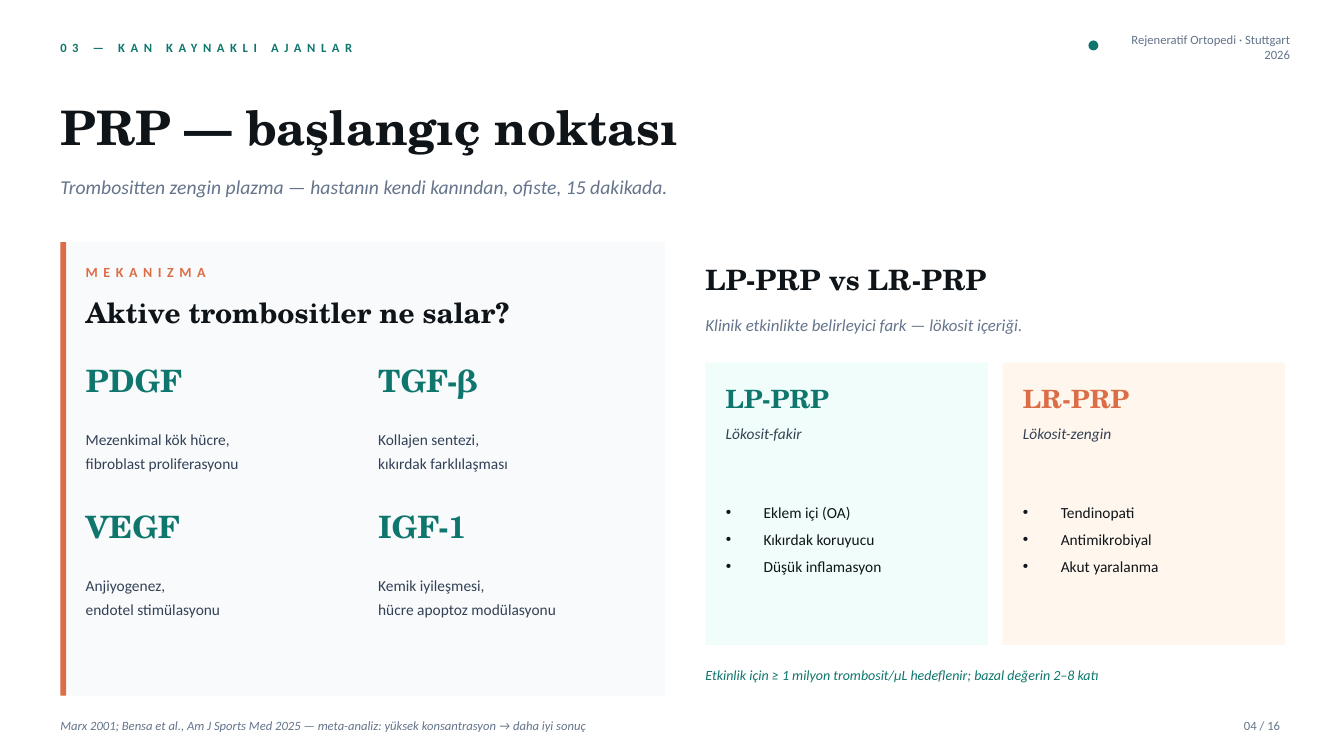
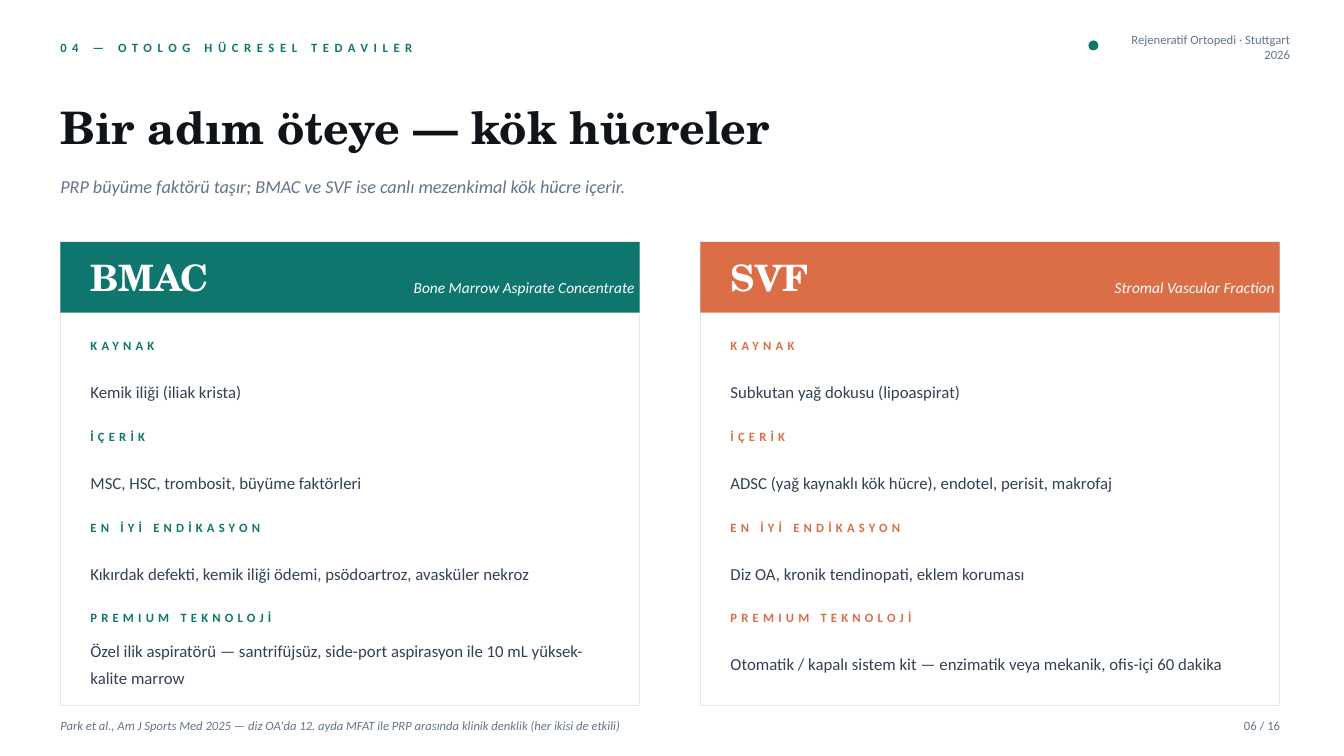
from dataclasses import dataclass

from pptx import Presentation
from pptx.dml.color import RGBColor
from pptx.enum.shapes import MSO_SHAPE
from pptx.enum.text import MSO_ANCHOR, MSO_AUTO_SIZE, PP_ALIGN
from pptx.util import Cm, Pt

RECT, OVAL = MSO_SHAPE.RECTANGLE, MSO_SHAPE.OVAL
MIDDLE, NO_FIT = MSO_ANCHOR.MIDDLE, MSO_AUTO_SIZE.NONE
LEFT, RIGHT = PP_ALIGN.LEFT, PP_ALIGN.RIGHT
TWO_CONTENT, TITLE_ONLY = 3, 5


@dataclass(frozen=True)
class Theme:
    # Fonts
    serif: str = "TeX Gyre Schola"
    sans: str = "Calibri"
    # Colours
    ink: str = "0F1419"
    text: str = "334155"
    muted: str = "64748B"
    teal: str = "0F766E"
    coral: str = "DC6E47"
    white: str = "FFFFFF"
    panel: str = "F8FAFC"
    mint: str = "F0FDFA"
    cream: str = "FFF7ED"
    border: str = "E2E8F0"
    # Type sizes
    title: int = 34
    title_small: int = 32
    band: int = 26
    factor: int = 22
    heading: int = 20
    card: int = 18
    lead: int = 14
    lead_small: int = 13
    body: int = 12
    detail: int = 11
    note: int = 10
    small: int = 9


T = Theme()
MARGIN = 1.52
CONTENT_TOP = 6.1
FOOTER_TOP = 17.91


# --- Element helpers ---

def write(sp, box, text, size=T.body, color=T.text, font=T.sans, bold=False,
          italic=False, tracking=0, align=LEFT, line=None, after=0):
    """Place a text shape at box (cm) and fill it, one paragraph per line."""
    sp.left, sp.top, sp.width, sp.height = map(Cm, box)
    tf = sp.text_frame
    tf.word_wrap = True
    tf.auto_size = NO_FIT
    tf.vertical_anchor = MIDDLE
    tf.margin_left = tf.margin_top = tf.margin_right = tf.margin_bottom = 0
    for i, content in enumerate(text.split("\n")):
        p = tf.add_paragraph() if i else tf.paragraphs[0]
        p.alignment = align
        p.space_before, p.space_after = Pt(0), Pt(after)
        if line:
            p.line_spacing = line
        r = p.add_run()
        r.text = content
        r.font.name, r.font.size = font, Pt(size)
        r.font.bold, r.font.italic = bold, italic
        r.font.color.rgb = RGBColor.from_string(color)
        if tracking:
            r.font._element.set("spc", str(tracking * 100))


def add_text(s, box, text, **fmt):
    write(s.shapes.add_textbox(*map(Cm, box)), box, text, **fmt)


def add_heading(s, box, text, size, color=T.ink):
    add_text(s, box, text, size=size, color=color, font=T.serif, bold=True)


def add_label(s, box, text, color, size=T.small, tracking=4):
    add_text(s, box, text, size=size, color=color, bold=True, tracking=tracking)


def add_block(s, box, fill, line=None, kind=RECT):
    sp = s.shapes.add_shape(kind, *map(Cm, box))
    sp.shadow.inherit = False
    sp.fill.solid()
    sp.fill.fore_color.rgb = RGBColor.from_string(fill)
    if line:
        sp.line.color.rgb = RGBColor.from_string(line)
        sp.line.width = Pt(1)
    else:
        sp.line.fill.background()


def add_list(s, sp, box, items):
    """Fill a body placeholder and bring it above the card behind it."""
    write(sp, box, "\n".join(items), size=T.detail, color=T.ink, after=6)
    s.shapes.element.append(sp.element)


# --- Shared slide frame ---

def add_frame(prs, layout, section, title, lead, source, page,
              title_size=T.title, lead_size=T.lead):
    s = prs.slides.add_slide(prs.slide_layouts[layout])
    write(s.shapes.title, (MARGIN, 2.29, 30, 1.78), title, size=title_size,
          color=T.ink, font=T.serif, bold=True)
    add_label(s, (MARGIN, 0.81, 20.32, 0.76), section, T.teal)
    add_block(s, (27.43, 1.02, 0.25, 0.25), T.teal, kind=OVAL)
    add_text(s, (27.81, 0.81, 4.7, 0.76), "Rejeneratif Ortopedi · Stuttgart 2026",
             size=T.small, color=T.muted, align=RIGHT)
    add_text(s, (MARGIN, 4.19, 30, 1.02), lead, size=lead_size,
             color=T.muted, italic=True)
    add_text(s, (MARGIN, FOOTER_TOP, 28, 0.76), source, size=T.small,
             color=T.muted, italic=True)
    add_text(s, (29.97, FOOTER_TOP, 2.29, 0.76), page, size=T.small,
             color=T.muted, align=RIGHT)
    return s


# --- PRP slide ---

def add_mechanism(s, factors):
    left = 2.16
    add_block(s, (MARGIN, CONTENT_TOP, 15.24, 11.43), T.panel)
    add_block(s, (MARGIN, CONTENT_TOP, 0.15, 11.43), T.coral)
    add_label(s, (left, 6.48, 14, 0.76), "MEKANIZMA", T.coral, size=T.note)
    add_heading(s, (left, 7.24, 14, 1.27), "Aktive trombositler ne salar?", T.heading)
    for i, (name, effect) in enumerate(factors):
        row, col = divmod(i, 2)
        x, y = left + col * 7.37, 9.02 + row * 3.68
        add_heading(s, (x, y, 6.86, 1.14), name, T.factor, T.teal)
        add_text(s, (x, y + 1.27, 6.86, 2.03), effect, size=T.detail, line=1.3)


def add_type_card(s, body, x, name, kind, items, fill, accent):
    y, inner, width = 9.14, x + 0.51, 6.1
    add_block(s, (x, y, 7.11, 7.11), fill)
    add_heading(s, (inner, y + 0.38, width, 1.02), name, T.card, accent)
    add_text(s, (inner, y + 1.4, width, 0.76), kind, size=T.detail, italic=True)
    add_list(s, body, (inner, y + 2.29, width, 4.32), items)


def build_prp(prs):
    s = add_frame(
        prs, TWO_CONTENT, "03 — KAN KAYNAKLI AJANLAR", "PRP — başlangıç noktası",
        "Trombositten zengin plazma — hastanın kendi kanından, ofiste, 15 dakikada.",
        "Marx 2001; Bensa et al., Am J Sports Med 2025 — meta-analiz: "
        "yüksek konsantrasyon → daha iyi sonuç", "04 / 16")
    add_mechanism(s, [
        ("PDGF", "Mezenkimal kök hücre,\nfibroblast proliferasyonu"),
        ("TGF-β", "Kollajen sentezi,\nkıkırdak farklılaşması"),
        ("VEGF", "Anjiyogenez,\nendotel stimülasyonu"),
        ("IGF-1", "Kemik iyileşmesi,\nhücre apoptoz modülasyonu"),
    ])
    left, width = 17.78, 14.48
    add_heading(s, (left, 6.48, width, 1.14), "LP-PRP vs LR-PRP", T.heading)
    add_text(s, (left, 7.75, width, 0.89),
             "Klinik etkinlikte belirleyici fark — lökosit içeriği.",
             color=T.muted, italic=True)
    cards = [
        ("LP-PRP", "Lökosit-fakir",
         ["Eklem içi (OA)", "Kıkırdak koruyucu", "Düşük inflamasyon"], T.mint, T.teal),
        ("LR-PRP", "Lökosit-zengin",
         ["Tendinopati", "Antimikrobiyal", "Akut yaralanma"], T.cream, T.coral),
    ]
    bodies = list(s.placeholders)[1:]
    for i, (body, card) in enumerate(zip(bodies, cards)):
        add_type_card(s, body, left + i * 7.49, *card)
    add_text(s, (left, 16.51, width, 1.02),
             "Etkinlik için ≥ 1 milyon trombosit/μL hedeflenir; bazal değerin 2–8 katı",
             size=T.note, color=T.teal, italic=True)


# --- Stem cell slide ---

def add_therapy_card(s, x, name, full_name, accent, values):
    labels = ["KAYNAK", "İÇERİK", "EN İYİ ENDİKASYON", "PREMIUM TEKNOLOJİ"]
    inner, width = x + 0.76, 13.08
    add_block(s, (x, CONTENT_TOP, 14.6, 11.68), T.white, line=T.border)
    add_block(s, (x, CONTENT_TOP, 14.6, 1.78), accent)
    add_heading(s, (inner, 6.35, 5.08, 1.27), name, T.band, T.white)
    add_text(s, (x + 5.84, 6.73, 8.64, 1.02), full_name, size=T.detail,
             color=T.white, italic=True, align=RIGHT)
    for i, (label, value) in enumerate(zip(labels, values)):
        y = 8.38 + i * 2.29
        add_label(s, (inner, y, width, 0.64), label, accent, tracking=3)
        add_text(s, (inner, y + 0.64, width, 1.52), value, line=1.35)


def build_stem_cells(prs):
    s = add_frame(
        prs, TITLE_ONLY, "04 — OTOLOG HÜCRESEL TEDAVILER",
        "Bir adım öteye — kök hücreler",
        "PRP büyüme faktörü taşır; BMAC ve SVF ise canlı mezenkimal kök hücre içerir.",
        "Park et al., Am J Sports Med 2025 — diz OA'da 12. ayda MFAT ile PRP "
        "arasında klinik denklik (her ikisi de etkili)", "06 / 16",
        title_size=T.title_small, lead_size=T.lead_small)
    therapies = [
        ("BMAC", "Bone Marrow Aspirate Concentrate", T.teal, [
            "Kemik iliği (iliak krista)",
            "MSC, HSC, trombosit, büyüme faktörleri",
            "Kıkırdak defekti, kemik iliği ödemi, psödoartroz, avasküler nekroz",
            "Özel ilik aspiratörü — santrifüjsüz, side-port aspirasyon ile "
            "10 mL yüksek-kalite marrow"]),
        ("SVF", "Stromal Vascular Fraction", T.coral, [
            "Subkutan yağ dokusu (lipoaspirat)",
            "ADSC (yağ kaynaklı kök hücre), endotel, perisit, makrofaj",
            "Diz OA, kronik tendinopati, eklem koruması",
            "Otomatik / kapalı sistem kit — enzimatik veya mekanik, "
            "ofis-içi 60 dakika"]),
    ]
    for i, therapy in enumerate(therapies):
        add_therapy_card(s, MARGIN + i * 16.13, *therapy)


def main():
    prs = Presentation()
    prs.slide_width, prs.slide_height = Cm(33.87), Cm(19.05)
    build_prp(prs)
    build_stem_cells(prs)
    prs.save("out.pptx")


if __name__ == "__main__":
    main()
